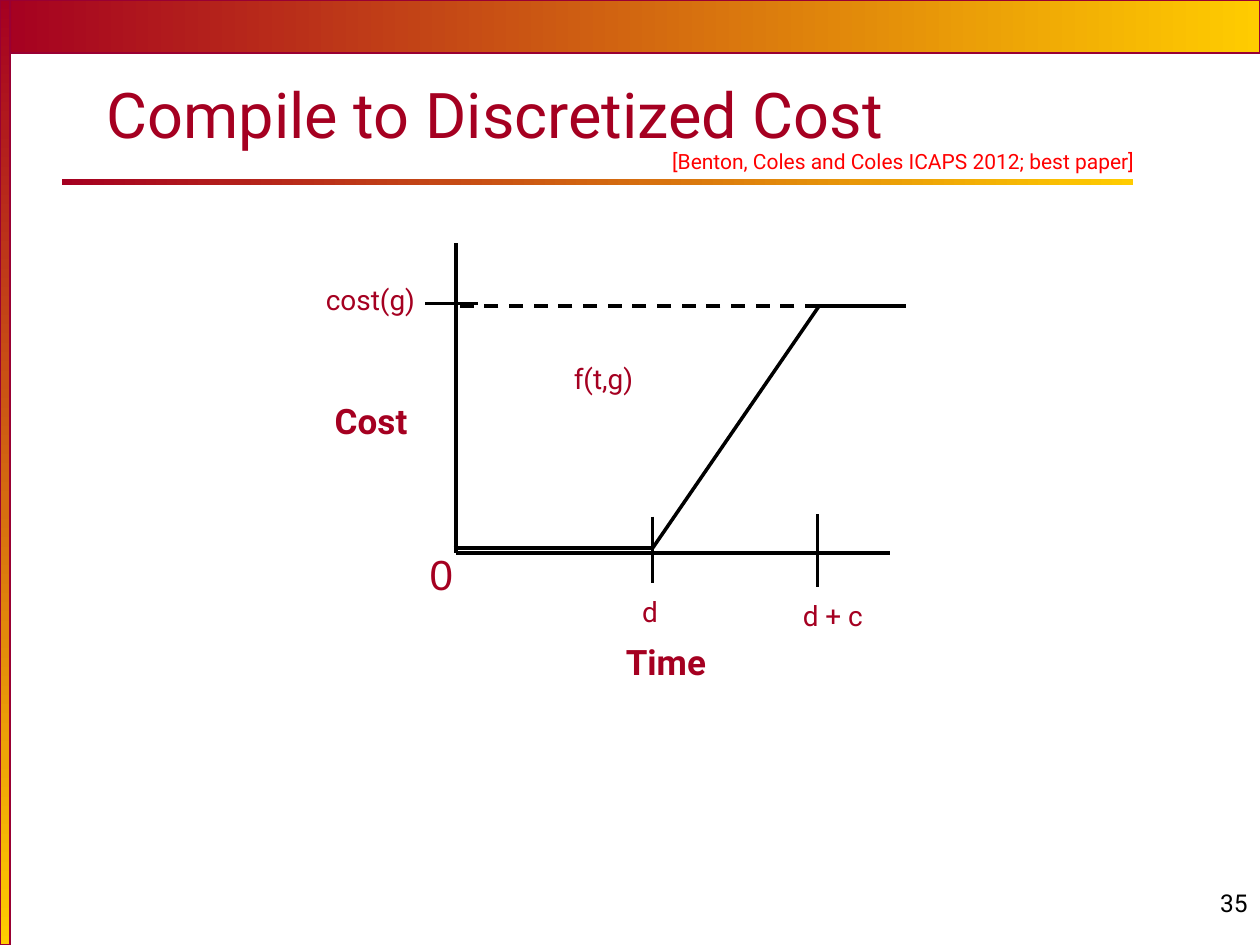
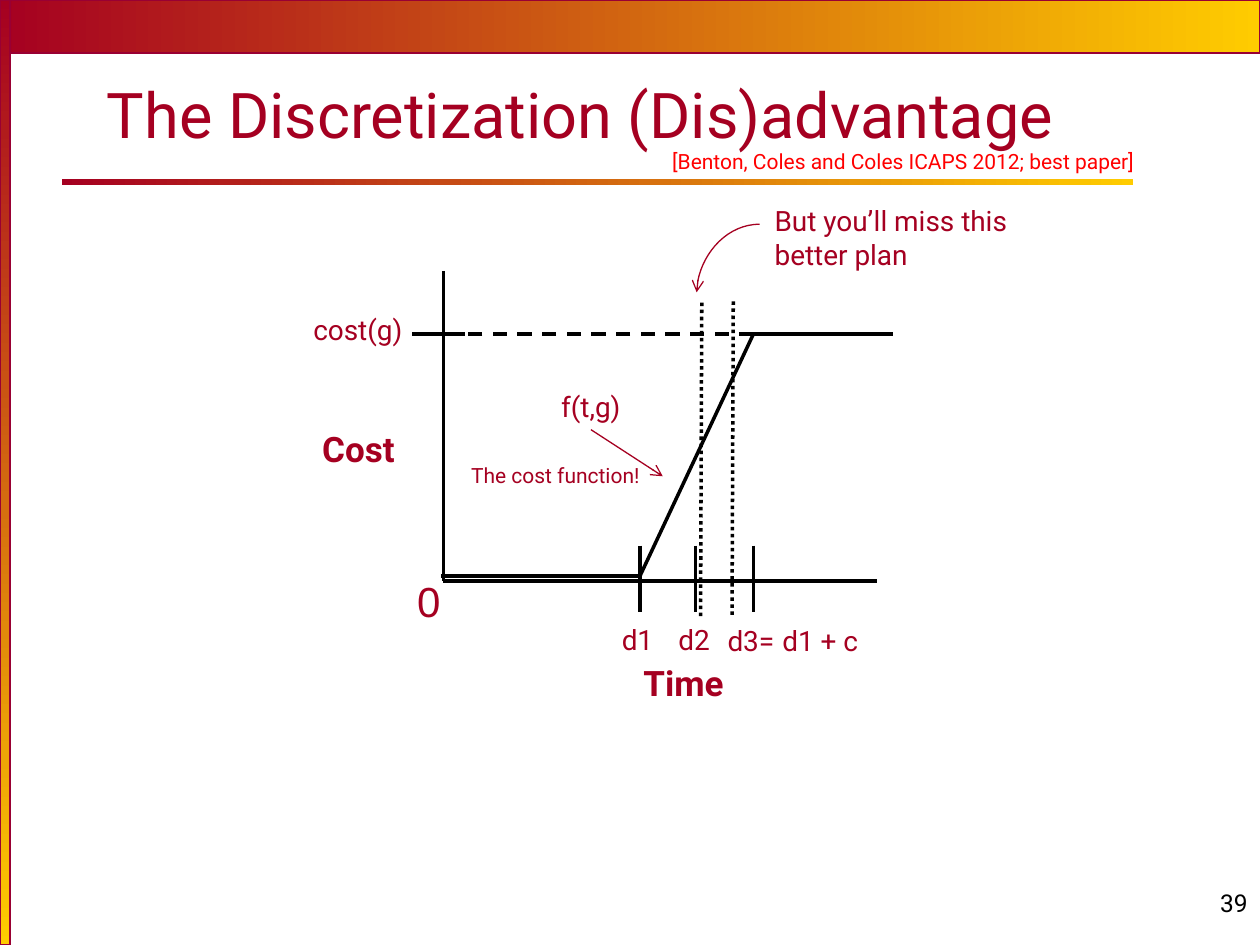
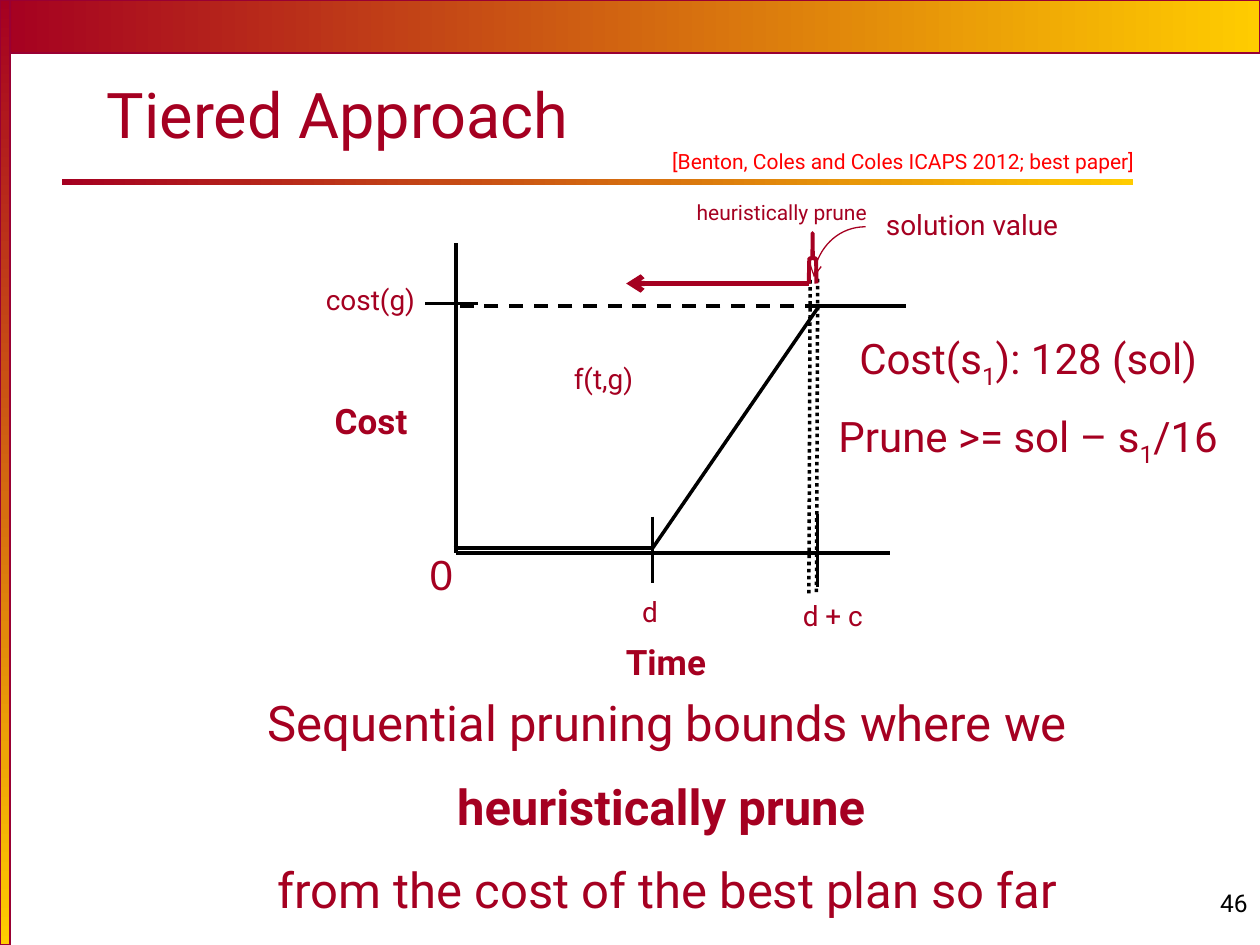
from lxml import etree
from pptx import Presentation
from pptx.dml.color import RGBColor
from pptx.enum.dml import MSO_LINE
from pptx.enum.shapes import MSO_CONNECTOR, MSO_SHAPE
from pptx.enum.text import MSO_ANCHOR, PP_ALIGN
from pptx.oxml.ns import qn
from pptx.util import Inches, Pt

LEFT, CENTER, RIGHT = PP_ALIGN.LEFT, PP_ALIGN.CENTER, PP_ALIGN.RIGHT
TOP, BOTTOM = MSO_ANCHOR.TOP, MSO_ANCHOR.BOTTOM
STRAIGHT, CURVE = MSO_CONNECTOR.STRAIGHT, MSO_CONNECTOR.CURVE
DASH, DOT = MSO_LINE.DASH, MSO_LINE.ROUND_DOT
RECTANGLE, RIGHT_BRACE = MSO_SHAPE.RECTANGLE, MSO_SHAPE.RIGHT_BRACE

COLORS = {
    "maroon": "A50021",
    "gold": "FFCC00",
    "edge": "990033",
    "red": "FF0000",
    "black": "000000",
}
FONT = "Roboto"
CITATION = "[Benton, Coles and Coles ICAPS 2012; best paper]"
SMALL_INSET = (0.09, 0.04)
WIDE_INSET = (0.1, 0.05)


def add_text(slide, lines, box, size, color="maroon", align=CENTER, bold=False,
             font=FONT, inset=SMALL_INSET, anchor=TOP, wrap=True):
    """Add a text box; text between two bars in a line is set as a subscript."""
    frame = slide.shapes.add_textbox(*map(Inches, box)).text_frame
    frame.word_wrap = wrap
    frame.vertical_anchor = anchor
    frame.margin_left = frame.margin_right = Inches(inset[0])
    frame.margin_top = frame.margin_bottom = Inches(inset[1])
    for row, line in enumerate(lines):
        paragraph = frame.add_paragraph() if row else frame.paragraphs[0]
        paragraph.alignment = align
        if row:
            paragraph.space_before = Pt(size / 2)
        for index, part in enumerate(line.split("|")):
            run = paragraph.add_run()
            run.text = part
            run.font.name = font
            run.font.size = Pt(size)
            run.font.bold = bold
            run.font.color.rgb = RGBColor.from_string(COLORS[color])
            if index % 2:
                run.font._element.set("baseline", "-25000")
    return frame


def add_line(slide, start, end, color="black", width=2, dash=None, arrow=False, kind=STRAIGHT):
    """Add a straight line or a quarter curve, optionally ending in an arrowhead."""
    line = slide.shapes.add_connector(kind, *map(Inches, (*start, *end)))
    line.line.color.rgb = RGBColor.from_string(COLORS[color])
    line.line.width = Pt(width)
    if dash:
        line.line.dash_style = dash
    properties = line._element.spPr
    if arrow:
        etree.SubElement(properties.find(qn("a:ln")), qn("a:tailEnd"), type="arrow")
    if kind == CURVE:
        properties.find(qn("a:prstGeom")).set("prst", "curvedConnector2")
    etree.SubElement(properties, qn("a:effectLst"))


# Band box, gradient angle, outlined
BANDS = [
    ((0, 0, 10, 0.42), 0, True),
    ((0.49, 1.42, 8.5, 0.05), 0, False),
    ((0, 0, 0.08, 7.5), 270, True),
]

# Each graph is shifted by (dx, dy) from the same base position
SINGLE_DEADLINE = {
    "shift": (0, 0),
    "ramp_end": 6.5,
    "cost_y": 2.41,
    "ticks": [(5.18, 4.1, 4.63), (6.49, 4.08, 4.66)],
    "time_labels": [("d", 4.86, 4.68, 0.6), ("d + c", 6.04, 4.71, 1.14)],
    "time_title": (4.74, 5.04),
}
THREE_DEADLINES = {
    "shift": (-0.1, 0.22),
    "ramp_end": 5.98,
    "cost_y": 2.65,
    "ticks": [(x, 4.33, 4.86) for x in (5.08, 5.52, 5.98)],
    "time_labels": [("d1", 4.76, 4.9, 0.6), ("d2", 5.21, 4.9, 0.6),
                    ("d3=", 5.66, 4.91, 0.6), ("d1 + c", 5.94, 4.91, 1.14)],
    "time_title": (4.88, 5.21),
}
PAGES = [
    ("Compile to Discretized Cost", "35", SINGLE_DEADLINE),
    ("The Discretization (Dis)advantage", "39", THREE_DEADLINES),
    ("Tiered Approach", "46", SINGLE_DEADLINE),
]

prs = Presentation()
prs.slide_width, prs.slide_height = Inches(10), Inches(7.5)

for title, number, graph in PAGES:
    slide = prs.slides.add_slide(prs.slide_layouts[6])

    # Gradient bands
    for box, angle, outlined in BANDS:
        band = slide.shapes.add_shape(RECTANGLE, *map(Inches, box))
        band.shadow.inherit = False
        band.fill.gradient()
        band.fill.gradient_angle = angle
        for stop, name in zip(band.fill.gradient_stops, ("maroon", "gold")):
            stop.color.rgb = RGBColor.from_string(COLORS[name])
        if outlined:
            band.line.color.rgb = RGBColor.from_string(COLORS["edge"])
            band.line.width = Pt(0.75)
        else:
            band.line.fill.background()

    # Title, slide number and citation
    add_text(slide, [title], (0.75, 0.5, 8.52, 0.75), 36,
             align=LEFT, inset=WIDE_INSET, anchor=BOTTOM)
    add_text(slide, [number], (7.92, 6.83, 2.08, 0.5), 14, "black",
             align=RIGHT, inset=WIDE_INSET, anchor=BOTTOM)
    add_text(slide, [CITATION], (5.19, 1.13, 3.96, 0.3), 12, "red",
             inset=WIDE_INSET, wrap=False)

    # Axes and cost function
    dx, dy = graph["shift"]
    axis_x, axis_y = 3.62 + dx, 4.39 + dy
    ramp_start, ramp_end = 5.18 + dx, graph["ramp_end"]
    zero_y, full_y = 4.35 + dy, 2.43 + dy
    cost_y = graph["cost_y"]
    add_line(slide, (axis_x, 1.93 + dy), (axis_x, axis_y))
    add_line(slide, (7.06 + dx, axis_y), (axis_x, axis_y))
    add_line(slide, (3.6 + dx, zero_y), (ramp_start, zero_y))
    add_line(slide, (ramp_start, zero_y), (ramp_end, full_y))
    add_line(slide, (ramp_end, full_y), (7.19 + dx, full_y))
    add_line(slide, (ramp_end, full_y), (axis_x, full_y), dash=DASH)
    add_line(slide, (3.79 + dx, cost_y), (3.37 + dx, cost_y))
    for x, top, bottom in graph["ticks"]:
        add_line(slide, (x, top), (x, bottom))

    # Graph labels
    add_text(slide, ["Cost"], (2.4 + dx, 3.13 + dy, 1.09, 0.43), 20, bold=True)
    add_text(slide, ["Time"], (*graph["time_title"], 1.09, 0.43), 20, bold=True)
    add_text(slide, ["0"], (3.32 + dx, 4.31 + dy, 0.35, 0.48), 24, font="Arial")
    add_text(slide, ["cost(g)"], (2.37 + dx, cost_y - 0.21, 1.14, 0.36), 16)
    add_text(slide, ["f(t,g)"], (4.22 + dx, 2.83 + dy, 1.14, 0.36), 16)
    for label, left, top, width in graph["time_labels"]:
        add_text(slide, [label], (left, top, width, 0.36), 16)

compile_slide, discretization_slide, tiered_slide = prs.slides

# Discretization: the missed plan and the cost function
add_line(discretization_slide, (5.81, 4.88), (5.82, 2.38), dash=DOT)
add_line(discretization_slide, (5.56, 4.89), (5.57, 2.4), dash=DOT)
add_line(discretization_slide, (6.03, 1.78), (5.53, 2.32), "maroon", 0.75, arrow=True, kind=CURVE)
add_line(discretization_slide, (4.69, 3.41), (5.26, 3.78), "maroon", 0.75, arrow=True)
add_text(discretization_slide, ["But you’ll miss this better plan"], (6.05, 1.57, 2.5, 0.64), 16,
         align=LEFT, inset=WIDE_INSET)
add_text(discretization_slide, ["The cost function!"], (3.64, 3.62, 1.68, 0.3), 12,
         align=LEFT, inset=WIDE_INSET)

# Tiered approach: solution value and pruning bound
add_line(tiered_slide, (6.48, 4.7), (6.49, 2.2), dash=DOT)
add_line(tiered_slide, (6.42, 4.71), (6.43, 2.21), dash=DOT)
add_line(tiered_slide, (6.42, 2.25), (4.97, 2.25), "maroon", 3, arrow=True)
add_line(tiered_slide, (6.87, 1.8), (6.46, 2.2), "maroon", 0.75, arrow=True, kind=CURVE)
prune_brace = tiered_slide.shapes.add_shape(
    RIGHT_BRACE, Inches(6.25), Inches(2.02), Inches(0.4), Inches(0.06))
prune_brace.rotation = 270
prune_brace.adjustments[0] = 0.08
prune_brace.shadow.inherit = False
prune_brace.fill.background()
prune_brace.line.color.rgb = RGBColor.from_string(COLORS["maroon"])
prune_brace.line.width = Pt(2.25)
add_text(tiered_slide, ["solution value"], (6.9, 1.61, 1.63, 0.36), 16)
add_text(tiered_slide, ["heuristically prune"], (5.39, 1.54, 1.63, 0.29), 12)
add_text(tiered_slide, ["Cost(s|1|): 128 (sol)", "Prune >= sol – s|1|/16"],
         (6.49, 2.59, 3.34, 0.91), 24, inset=WIDE_INSET, wrap=False)

# Tiered approach: summary
summary = add_text(
    tiered_slide,
    ["Sequential pruning bounds where we", "heuristically prune ",
     "from the cost of the best plan so far"],
    (1.97, 5.45, 6.65, 1.51), 28, inset=WIDE_INSET, wrap=False)
summary.paragraphs[1].runs[0].font.bold = True

prs.save("out.pptx")
